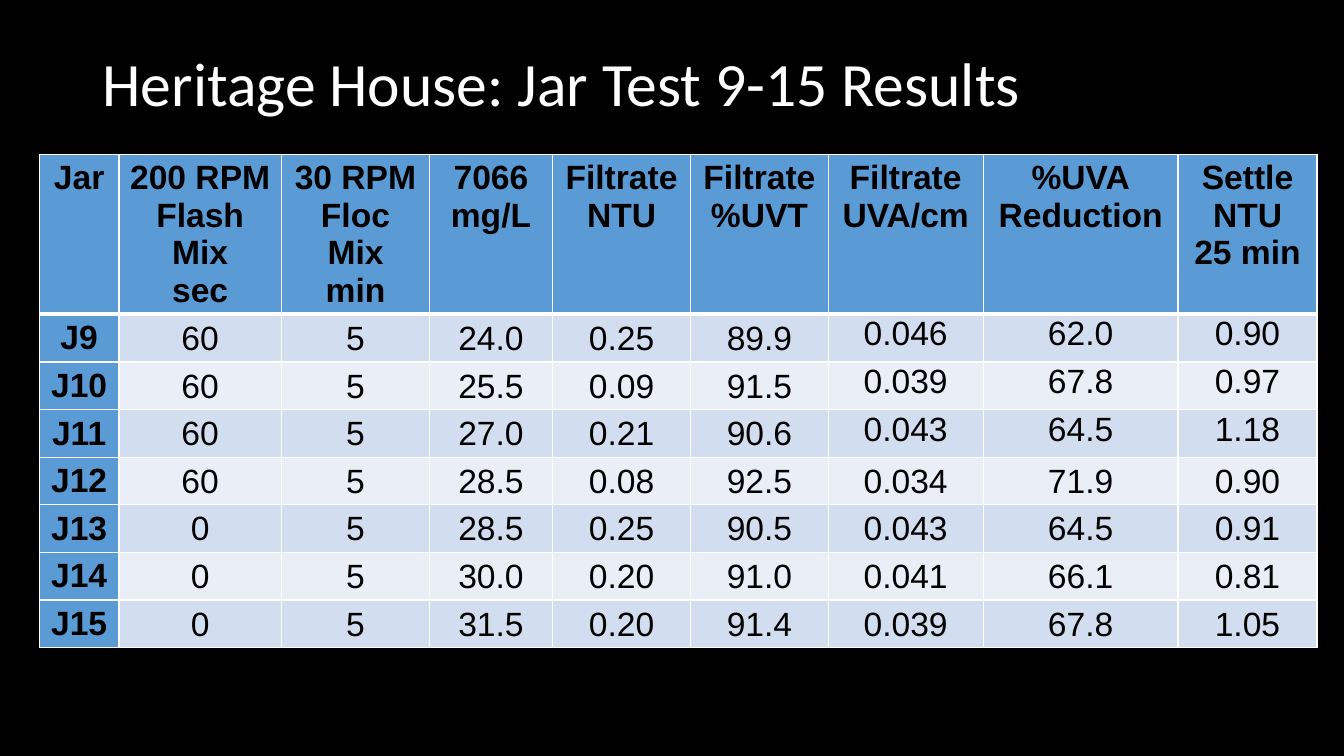
from lxml import etree
from pptx import Presentation
from pptx.dml.color import RGBColor
from pptx.enum.text import MSO_ANCHOR, PP_ALIGN
from pptx.oxml.ns import qn
from pptx.util import Cm, Pt

LEFT, CENTER = PP_ALIGN.LEFT, PP_ALIGN.CENTER
TOP, MIDDLE = MSO_ANCHOR.TOP, MSO_ANCHOR.MIDDLE

COLORS = {
    "background": "000000",
    "title": "FFFFFF",
    "text": "000000",
    "border": "FFFFFF",
    "header": "5B9BD5",
    "odd": "D2DEEF",
    "even": "EAEFF7",
}


def add_run(p, text, font, size, color, bold=False):
    r = p.add_run()
    r.text = text
    r.font.name = font
    r.font.size = Pt(size)
    r.font.bold = bold
    r.font.color.rgb = RGBColor.from_string(COLORS[color])


def add_borders(cell, widths):
    tcPr = cell._tc.get_or_add_tcPr()
    for side, width in widths.items():
        ln = etree.SubElement(tcPr, qn("a:ln" + side), w=str(Pt(width)))
        fill = etree.SubElement(ln, qn("a:solidFill"))
        etree.SubElement(fill, qn("a:srgbClr"), val=COLORS["border"])


prs = Presentation()
prs.slide_width, prs.slide_height = Cm(33.87), Cm(19.05)
s = prs.slides.add_slide(prs.slide_layouts[5])
s.background.fill.solid()
s.background.fill.fore_color.rgb = RGBColor.from_string(COLORS["background"])

# Title
title = s.shapes.title
title.left, title.top, title.width, title.height = Cm(2.33), Cm(0.33), Cm(29.21), Cm(3.68)
tf = title.text_frame
tf.word_wrap = True
tf.vertical_anchor = MIDDLE
p = tf.paragraphs[0]
p.alignment = LEFT
p.line_spacing = 0.9
add_run(p, "Heritage House: Jar Test 9-15 Results", "Calibri", 44, "title")

# Jar test data
rows = [
    ["Jar", "200 RPM\nFlash\nMix\nsec", "30 RPM\nFloc\nMix\nmin", "7066\nmg/L",
     "Filtrate\nNTU", "Filtrate\n%UVT", "Filtrate\nUVA/cm", "%UVA\nReduction",
     "Settle\nNTU\n25 min"],
    ["J9", "60", "5", "24.0", "0.25", "89.9", "0.046", "62.0", "0.90"],
    ["J10", "60", "5", "25.5", "0.09", "91.5", "0.039", "67.8", "0.97"],
    ["J11", "60", "5", "27.0", "0.21", "90.6", "0.043", "64.5", "1.18"],
    ["J12", "60", "5", "28.5", "0.08", "92.5", "0.034", "71.9", "0.90"],
    ["J13", "0", "5", "28.5", "0.25", "90.5", "0.043", "64.5", "0.91"],
    ["J14", "0", "5", "30.0", "0.20", "91.0", "0.041", "66.1", "0.81"],
    ["J15", "0", "5", "31.5", "0.20", "91.4", "0.039", "67.8", "1.05"],
]
col_widths = [2.01, 4.09, 3.74, 3.09, 3.49, 3.46, 3.91, 4.91, 3.5]
row_heights = [4.03] + [1.2] * 7

# Results table
table = s.shapes.add_table(len(rows), len(col_widths), Cm(0.99), Cm(3.89),
                           Cm(sum(col_widths)), Cm(sum(row_heights))).table
table.first_col = True
for col, width in zip(table.columns, col_widths):
    col.width = Cm(width)
for row, height in zip(table.rows, row_heights):
    row.height = Cm(height)

for i, values in enumerate(rows):
    for j, value in enumerate(values):
        cell = table.cell(i, j)
        heading = i == 0 or j == 0
        add_borders(cell, {"L": 1, "R": 1, "T": 3 if i == 1 else 1, "B": 3 if i == 0 else 1})
        fill = "header" if heading else "odd" if i % 2 else "even"
        cell.fill.solid()
        cell.fill.fore_color.rgb = RGBColor.from_string(COLORS[fill])
        if not heading:
            cell.margin_left = cell.margin_right = cell.margin_top = Cm(0.03)
            cell.margin_bottom = 0
            # The last three columns sit at the top in the first three jars
            cell.vertical_anchor = TOP if i <= 3 and j >= 6 else MIDDLE
        tf = cell.text_frame
        for k, line in enumerate(value.split("\n")):
            p = tf.add_paragraph() if k else tf.paragraphs[0]
            p.alignment = CENTER
            add_run(p, line, "Arial", 24, "text", heading)

prs.save("out.pptx")
